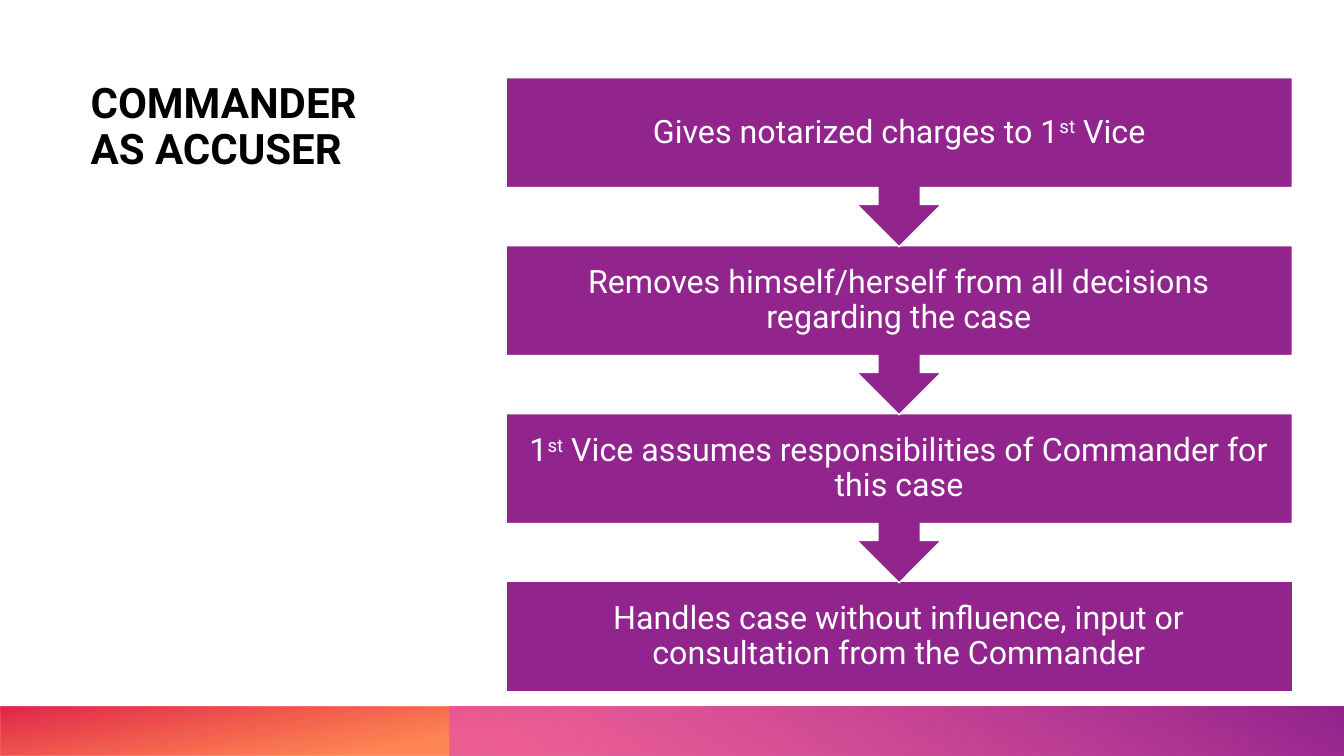
from lxml import etree
from pptx import Presentation
from pptx.dml.color import RGBColor
from pptx.enum import shapes, text
from pptx.oxml import ns
from pptx.util import Pt

TITLE = "COMMANDER AS ACCUSER"
STEPS = [
    [("Gives notarized charges to 1", False), ("st", True), (" Vice", False)],
    [("Removes himself/herself from all decisions regarding the case", False)],
    [("1", False), ("st", True),
     (" Vice assumes responsibilities of Commander for this case", False)],
    [("Handles case without influence, input or consultation from the Commander", False)],
]
BANDS = [
    {"left": 0, "flip": "flipH", "rotation": 180, "angle": 100,
     "stops": [(62, "FE4A00", 67), (100, "DA002F", 85)]},
    {"left": 321.2, "flip": "flipH", "rotation": 0, "angle": 240,
     "stops": [(9, "E349BB", 62), (99, "92248E", 100)]},
]
FONT, PURPLE, WHITE, BLACK = "Roboto", "92248E", "FFFFFF", "000000"
SLIDE_W, SLIDE_H = 960, 540
BAND_TOP = 504.7
STEP_LEFT, STEP_TOP, STEP_W = 361.5, 55.5, 561.6
BOX_H, CALLOUT_H, PITCH = 78.5, 120.8, 120


def rgb(value):
    return RGBColor.from_string(value)


def add_run(p, words, size, color, bold=False, raised=False):
    r = p.add_run()
    r.text = words
    r.font.name, r.font.size, r.font.bold = FONT, Pt(size), bold
    r.font.color.rgb = rgb(color)
    if raised:
        r.font._element.set("baseline", "30000")


def add_block(s, kind, left, top, width, height):
    sp = s.shapes.add_shape(kind, Pt(left), Pt(top), Pt(width), Pt(height))
    sp.shadow.inherit = False
    return sp


def add_band(s, band):
    sp = add_block(s, shapes.MSO_SHAPE.RECTANGLE, band["left"], BAND_TOP,
                   SLIDE_W - band["left"], SLIDE_H - BAND_TOP)
    sp.line.fill.background()
    sp.rotation = band["rotation"]
    sp_pr = sp._element.spPr
    sp_pr.find(ns.qn("a:xfrm")).set(band["flip"], "1")
    grad = etree.Element(ns.qn("a:gradFill"), rotWithShape="1")
    stops = etree.SubElement(grad, ns.qn("a:gsLst"))
    for position, color, alpha in band["stops"]:
        gs = etree.SubElement(stops, ns.qn("a:gs"), pos=str(position * 1000))
        clr = etree.SubElement(gs, ns.qn("a:srgbClr"), val=color)
        etree.SubElement(clr, ns.qn("a:alpha"), val=str(alpha * 1000))
    etree.SubElement(grad, ns.qn("a:lin"), ang=str(band["angle"] * 60000), scaled="0")
    sp_pr.find(ns.qn("a:prstGeom")).addnext(grad)


def add_title(s):
    sp = s.shapes.add_textbox(Pt(57.6), Pt(STEP_TOP), Pt(229.7), Pt(229.7))
    tf = sp.text_frame
    tf.word_wrap = True
    p = tf.paragraphs[0]
    p.line_spacing = 0.9
    add_run(p, TITLE, 30, BLACK, bold=True)


def add_step(s, index, runs):
    last = index == len(STEPS) - 1
    kind = shapes.MSO_SHAPE.RECTANGLE if last else shapes.MSO_SHAPE.DOWN_ARROW_CALLOUT
    sp = add_block(s, kind, STEP_LEFT, STEP_TOP + index * PITCH, STEP_W,
                   BOX_H if last else CALLOUT_H)
    if not last:
        sp.adjustments[3] = BOX_H / CALLOUT_H
    sp.fill.solid()
    sp.fill.fore_color.rgb = rgb(PURPLE)
    sp.line.color.rgb = rgb(WHITE)
    sp.line.width = Pt(1)
    tf = sp.text_frame
    tf.word_wrap = True
    tf.vertical_anchor = text.MSO_ANCHOR.MIDDLE
    tf.margin_left = tf.margin_right = tf.margin_top = tf.margin_bottom = Pt(13)
    p = tf.paragraphs[0]
    p.alignment = text.PP_ALIGN.CENTER
    p.line_spacing = 0.9
    for words, raised in runs:
        add_run(p, words, 23, WHITE, raised=raised)


def main():
    prs = Presentation()
    prs.slide_width, prs.slide_height = Pt(SLIDE_W), Pt(SLIDE_H)
    s = prs.slides.add_slide(prs.slide_layouts[6])
    for band in BANDS:
        add_band(s, band)
    add_title(s)
    for index, runs in reversed(list(enumerate(STEPS))):
        add_step(s, index, runs)
    prs.save("out.pptx")


if __name__ == "__main__":
    main()
